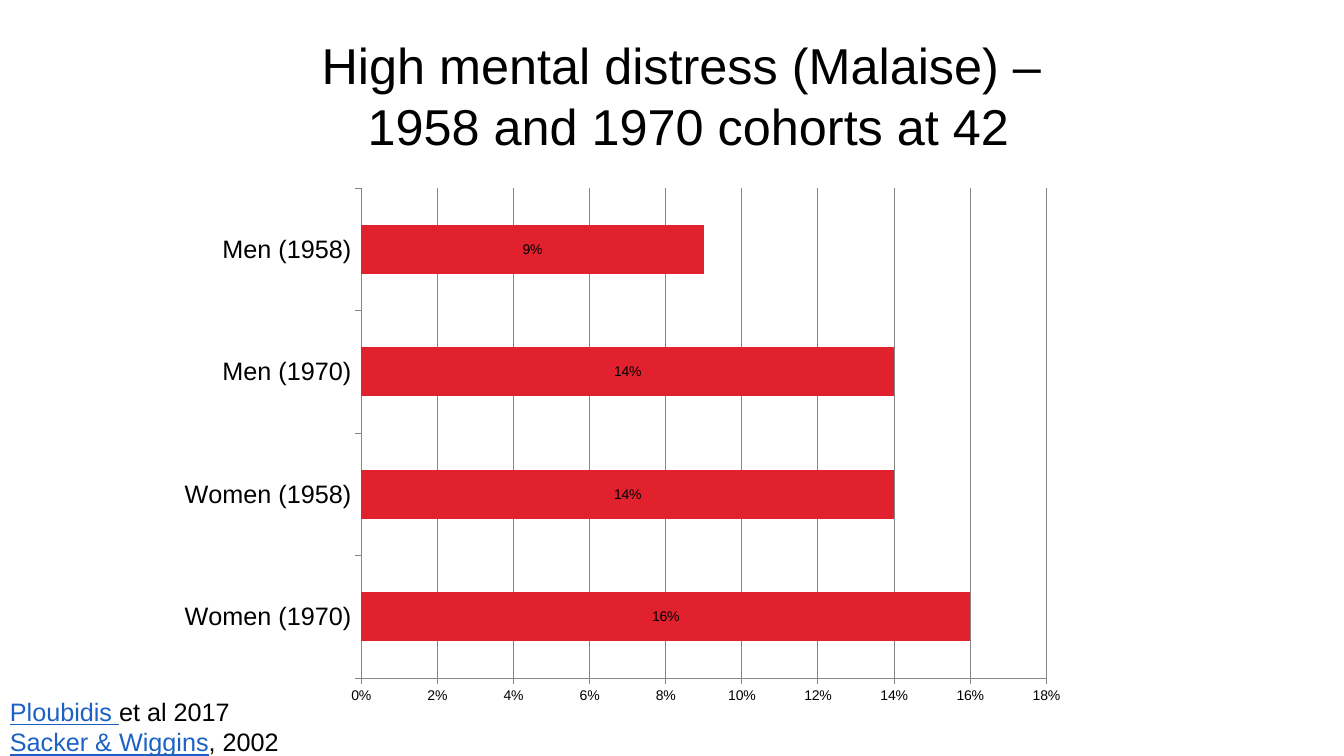
from lxml import etree
from pptx import Presentation
from pptx.chart.data import CategoryChartData
from pptx.dml.color import RGBColor
from pptx.enum.chart import XL_CHART_TYPE as ChartType, XL_LABEL_POSITION as LabelPos
from pptx.enum.chart import XL_TICK_MARK as Tick
from pptx.enum.text import MSO_ANCHOR as Anchor, PP_ALIGN as Align
from pptx.oxml.ns import qn
from pptx.util import Pt

FONT = "Arial"
BLACK, LINK_BLUE, RED, GREY = "000000", "1C62C5", "E2212F", "868686"
DISTRESS = {
    "Women (1970)": 0.16,
    "Women (1958)": 0.14,
    "Men (1970)": 0.14,
    "Men (1958)": 0.09,
}
SOURCES = [("Ploubidis ", "et al 2017"), ("Sacker & Wiggins", ", 2002")]


def color(hex_string):
    return RGBColor.from_string(hex_string)


def style_font(font, size, hex_string=BLACK):
    font.name = FONT
    font.size = Pt(size)
    font.color.rgb = color(hex_string)


def add_text(slide, box, lines, size, align=Align.LEFT, wrap=True):
    """Each line is a list of (words, colour, underlined) runs."""
    frame = slide.shapes.add_textbox(*map(Pt, box)).text_frame
    frame.word_wrap = wrap
    frame.vertical_anchor = Anchor.TOP
    for index, line in enumerate(lines):
        paragraph = frame.paragraphs[0] if index == 0 else frame.add_paragraph()
        paragraph.alignment = align
        for words, hex_string, underlined in line:
            run = paragraph.add_run()
            run.text = words
            style_font(run.font, size, hex_string)
            run.font.underline = underlined


def place_plot(chart, **fractions):
    """Fix the inner plot area as fractions of the chart."""
    plot_area = chart.plots[0]._element.getparent()
    for old in plot_area.findall(qn("c:layout")):
        plot_area.remove(old)
    layout = etree.Element(qn("c:layout"))
    plot_area.insert(0, layout)
    manual = etree.SubElement(layout, qn("c:manualLayout"))
    settings = {"layoutTarget": "inner", "xMode": "edge", "yMode": "edge", **fractions}
    for tag, value in settings.items():
        etree.SubElement(manual, qn(f"c:{tag}")).set("val", str(value))


def style_axis(axis, size):
    style_font(axis.tick_labels.font, size)
    axis.major_tick_mark = Tick.OUTSIDE
    axis.minor_tick_mark = Tick.NONE
    axis.format.line.color.rgb = color(GREY)
    axis.format.line.width = Pt(0.75)


def add_bar_chart(slide, box, values):
    data = CategoryChartData(number_format="0%")
    data.categories = list(values)
    data.add_series("Series 1", list(values.values()))
    chart = slide.shapes.add_chart(ChartType.BAR_STACKED, *map(Pt, box), data).chart
    chart.has_title = False
    chart.has_legend = False
    style_font(chart.font, 10)
    place_plot(chart, x=0.21, y=0, w=0.75, h=0.91)

    # Axes
    style_axis(chart.category_axis, 18)
    percent = chart.value_axis
    style_axis(percent, 10)
    percent.minimum_scale, percent.maximum_scale, percent.major_unit = 0, 0.18, 0.02
    percent.tick_labels.number_format = "0%"
    percent.tick_labels.number_format_is_linked = False
    percent.has_major_gridlines = True
    percent.major_gridlines.format.line.color.rgb = color(GREY)
    percent.major_gridlines.format.line.width = Pt(0.75)

    # Bars and their labels
    bars = chart.plots[0]
    bars.gap_width, bars.overlap, bars.vary_by_categories = 150, 100, False
    bars.series[0].format.fill.solid()
    bars.series[0].format.fill.fore_color.rgb = color(RED)
    bars.has_data_labels = True
    labels = bars.data_labels
    labels.show_value = True
    labels.number_format = "0%"
    labels.number_format_is_linked = False
    labels.position = LabelPos.CENTER
    style_font(labels.font, 10)


def main():
    deck = Presentation()
    deck.slide_width, deck.slide_height = Pt(960), Pt(540)
    slide = deck.slides.add_slide(deck.slide_layouts[6])

    # Title
    title = ["High mental distress (Malaise) – ", "1958 and 1970 cohorts at 42"]
    add_text(slide, (168.5, 21, 646.5, 94.5),
             [[(line, BLACK, False)] for line in title], 36, Align.CENTER)

    # Sources
    add_text(slide, (0, 494, 213, 51),
             [[(link, LINK_BLUE, True), (rest, BLACK, False)] for link, rest in SOURCES],
             18, wrap=False)

    # Distress by sex and cohort
    add_bar_chart(slide, (121, 134, 652.5, 385), DISTRESS)

    deck.save("out.pptx")


if __name__ == "__main__":
    main()
